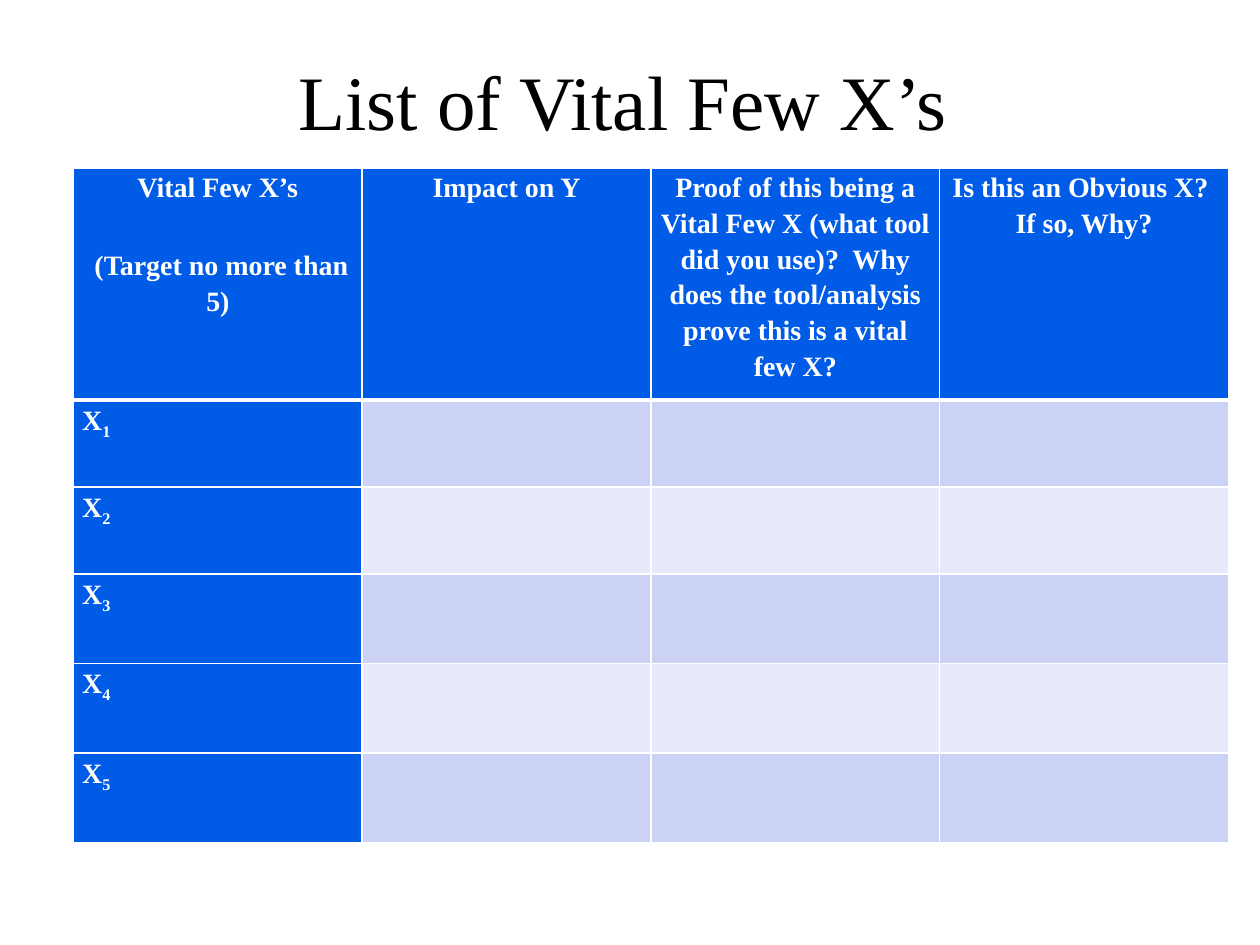
from lxml.etree import SubElement
from pptx import Presentation
from pptx.dml.color import RGBColor
from pptx.enum.text import MSO_ANCHOR, PP_ALIGN
from pptx.oxml.ns import qn
from pptx.util import Pt

FONT = "Times New Roman"
BLACK = RGBColor(0x00, 0x00, 0x00)
WHITE = RGBColor(0xFF, 0xFF, 0xFF)
BLUE = RGBColor(0x00, 0x5C, 0xE7)
DARK_BAND = RGBColor(0xCC, 0xD2, 0xF6)
LIGHT_BAND = RGBColor(0xE7, 0xEA, 0xFA)

HEADERS = [
    ["Vital Few X’s", " (Target no more than 5)"],
    ["Impact on Y"],
    ["Proof of this being a Vital Few X (what tool did you use)?  "
     "Why does the tool/analysis prove this is a vital few X?"],
    ["Is this an Obvious X?  If so, Why?"],
]
COLUMN_WIDTH = 165
ROW_HEIGHTS = [132.5, 49.7, 49.7, 51.2, 51.2, 51.2]


def add_text(paragraph, text, size=16, color=WHITE, bold=True, baseline=None):
    run = paragraph.add_run()
    run.text = text
    run.font.name = FONT
    run.font.size = Pt(size)
    run.font.bold = bold
    run.font.color.rgb = color
    if baseline is not None:
        run.font._element.set("baseline", str(baseline))


def add_title(slide, text):
    title = slide.shapes.title
    title.left, title.top, title.width, title.height = Pt(50), Pt(12), Pt(612), Pt(90)
    title.text_frame.vertical_anchor = MSO_ANCHOR.MIDDLE
    paragraph = title.text_frame.paragraphs[0]
    paragraph.alignment = PP_ALIGN.CENTER
    add_text(paragraph, text, size=44, color=BLACK, bold=False)


def set_borders(cell, bottom_width):
    """Draw white borders; call before the fill, which must follow them in the XML."""
    properties = cell._tc.get_or_add_tcPr()
    for side, width in (("L", 1), ("R", 1), ("T", 1), ("B", bottom_width)):
        line = SubElement(properties, qn(f"a:ln{side}"), w=str(Pt(width)))
        fill = SubElement(line, qn("a:solidFill"))
        SubElement(fill, qn("a:srgbClr"), val=str(WHITE))


def format_cell(cell, color, bottom_width=1):
    set_borders(cell, bottom_width)
    cell.fill.solid()
    cell.fill.fore_color.rgb = color
    cell.margin_left = cell.margin_right = Pt(5)
    cell.margin_top = cell.margin_bottom = Pt(0)


def format_paragraph(paragraph, alignment, space_before):
    paragraph.alignment = alignment
    paragraph.line_spacing = 1.15
    paragraph.space_before = Pt(space_before)


def fill_header(table):
    for cell, lines in zip(table.rows[0].cells, HEADERS):
        format_cell(cell, BLUE, bottom_width=3)
        frame = cell.text_frame
        for index, line in enumerate(lines):
            paragraph = frame.add_paragraph() if index else frame.paragraphs[0]
            format_paragraph(paragraph, PP_ALIGN.CENTER, 24)
            add_text(paragraph, line)


def fill_factor_row(table, number):
    label, *blanks = table.rows[number].cells
    format_cell(label, BLUE)
    paragraph = label.text_frame.paragraphs[0]
    format_paragraph(paragraph, PP_ALIGN.LEFT, 6)
    add_text(paragraph, "X")
    add_text(paragraph, str(number), baseline=-25000)
    for cell in blanks:
        format_cell(cell, DARK_BAND if number % 2 else LIGHT_BAND)


def add_factor_table(slide):
    table = slide.shapes.add_table(
        len(ROW_HEIGHTS), len(HEADERS), Pt(42), Pt(96),
        Pt(COLUMN_WIDTH * len(HEADERS)), Pt(sum(ROW_HEIGHTS))).table
    for row, height in zip(table.rows, ROW_HEIGHTS):
        row.height = Pt(height)
    table.first_col = True
    fill_header(table)
    for number in range(1, len(ROW_HEIGHTS)):
        fill_factor_row(table, number)


def main():
    presentation = Presentation()
    presentation.slide_width, presentation.slide_height = Pt(720), Pt(540)
    slide = presentation.slides.add_slide(presentation.slide_layouts[5])
    add_title(slide, "List of Vital Few X’s")
    add_factor_table(slide)
    presentation.save("out.pptx")


if __name__ == "__main__":
    main()
